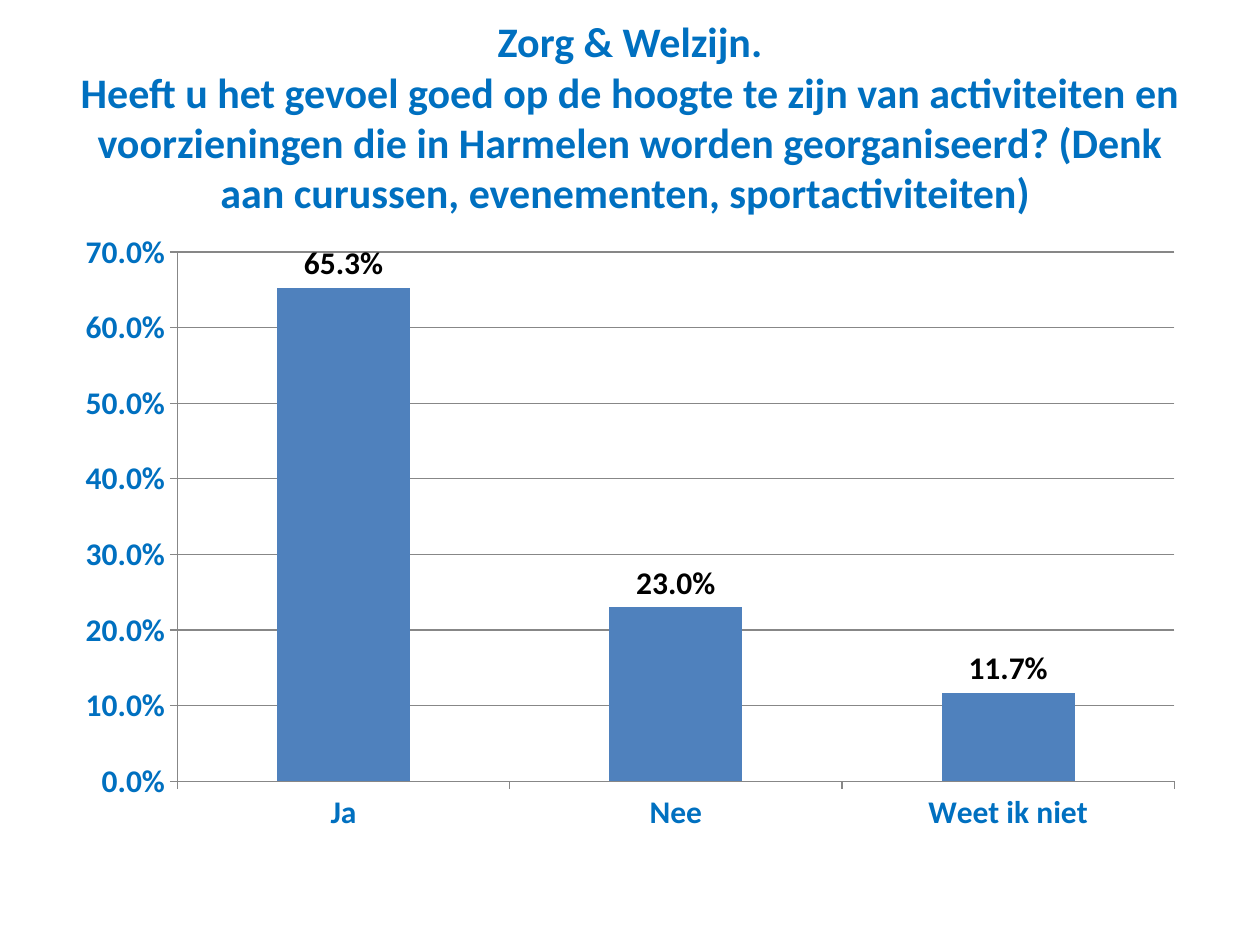
from dataclasses import dataclass

from pptx import Presentation
from pptx.chart.data import CategoryChartData
from pptx.dml.color import RGBColor
from pptx.enum.chart import XL_CHART_TYPE, XL_LABEL_POSITION, XL_TICK_MARK
from pptx.enum.text import MSO_ANCHOR, MSO_AUTO_SIZE, PP_ALIGN
from pptx.util import Inches, Pt


@dataclass(frozen=True)
class Theme:
    font: str = "Calibri"
    heading: str = "0070C0"
    bar: str = "4F81BD"
    label: str = "000000"
    line: str = "878787"
    title_size: int = 24
    chart_size: int = 18


THEME = Theme()
PERCENT = "0.0%"
ANSWERS = {"Ja": 0.653, "Nee": 0.23, "Weet ik niet": 0.117}
TITLE_LINES = (
    "Zorg & Welzijn.",
    "Heeft u het gevoel goed op de hoogte te zijn van activiteiten en "
    "voorzieningen die in Harmelen worden georganiseerd? "
    "(Denk aan curussen, evenementen, sportactiviteiten) ",
)


def format_font(font, size, color, bold=True):
    font.name = THEME.font
    font.size = Pt(size)
    font.bold = bold
    font.color.rgb = RGBColor.from_string(color)


def write_text(shape, text, *, size, color, bold=True, align=PP_ALIGN.CENTER):
    """Write one paragraph; a vertical tab in the text is a line break."""
    frame = shape.text_frame
    frame.word_wrap = True
    frame.auto_size = MSO_AUTO_SIZE.NONE
    frame.vertical_anchor = MSO_ANCHOR.MIDDLE
    paragraph = frame.paragraphs[0]
    paragraph.text = text
    paragraph.alignment = align
    for run in paragraph.runs:
        format_font(run.font, size, color, bold)


def place(shape, left, top, width, height):
    shape.left, shape.top = Inches(left), Inches(top)
    shape.width, shape.height = Inches(width), Inches(height)


def format_line(line):
    line.color.rgb = RGBColor.from_string(THEME.line)
    line.width = Pt(0.75)


def format_axis(axis):
    axis.major_tick_mark = XL_TICK_MARK.OUTSIDE
    axis.minor_tick_mark = XL_TICK_MARK.NONE
    format_line(axis.format.line)
    format_font(axis.tick_labels.font, THEME.chart_size, THEME.heading)


def add_answer_chart(slide, answers, left, top, width, height):
    data = CategoryChartData(number_format=PERCENT)
    data.categories = list(answers)
    data.add_series("Series 1", list(answers.values()))
    chart = slide.shapes.add_chart(
        XL_CHART_TYPE.COLUMN_CLUSTERED,
        Inches(left), Inches(top), Inches(width), Inches(height), data,
    ).chart
    chart.has_title = False
    chart.has_legend = False
    format_font(chart.font, THEME.chart_size, THEME.label, bold=False)

    # Axes and gridlines
    format_axis(chart.category_axis)
    value_axis = chart.value_axis
    format_axis(value_axis)
    value_axis.tick_labels.number_format = PERCENT
    value_axis.tick_labels.number_format_is_linked = False
    value_axis.minimum_scale = 0
    value_axis.maximum_scale = 0.7
    value_axis.major_unit = 0.1
    value_axis.has_major_gridlines = True
    format_line(value_axis.major_gridlines.format.line)

    # Columns and value labels
    plot = chart.plots[0]
    plot.gap_width = 150
    plot.vary_by_categories = False
    series = plot.series[0]
    series.format.fill.solid()
    series.format.fill.fore_color.rgb = RGBColor.from_string(THEME.bar)
    labels = series.data_labels
    labels.show_value = True
    labels.number_format = PERCENT
    labels.number_format_is_linked = False
    labels.position = XL_LABEL_POSITION.OUTSIDE_END
    format_font(labels.font, THEME.chart_size, THEME.label)


def main():
    presentation = Presentation()
    presentation.slide_width = Inches(10)
    presentation.slide_height = Inches(7.5)
    slide = presentation.slides.add_slide(presentation.slide_layouts[5])

    # Question
    title = slide.shapes.title
    place(title, 0.5, 0.3, 9, 1.25)
    write_text(title, "\v".join(TITLE_LINES),
               size=THEME.title_size, color=THEME.heading)

    # Answers
    add_answer_chart(slide, ANSWERS, 0.5, 1.75, 9, 4.95)

    presentation.save("out.pptx")


if __name__ == "__main__":
    main()
